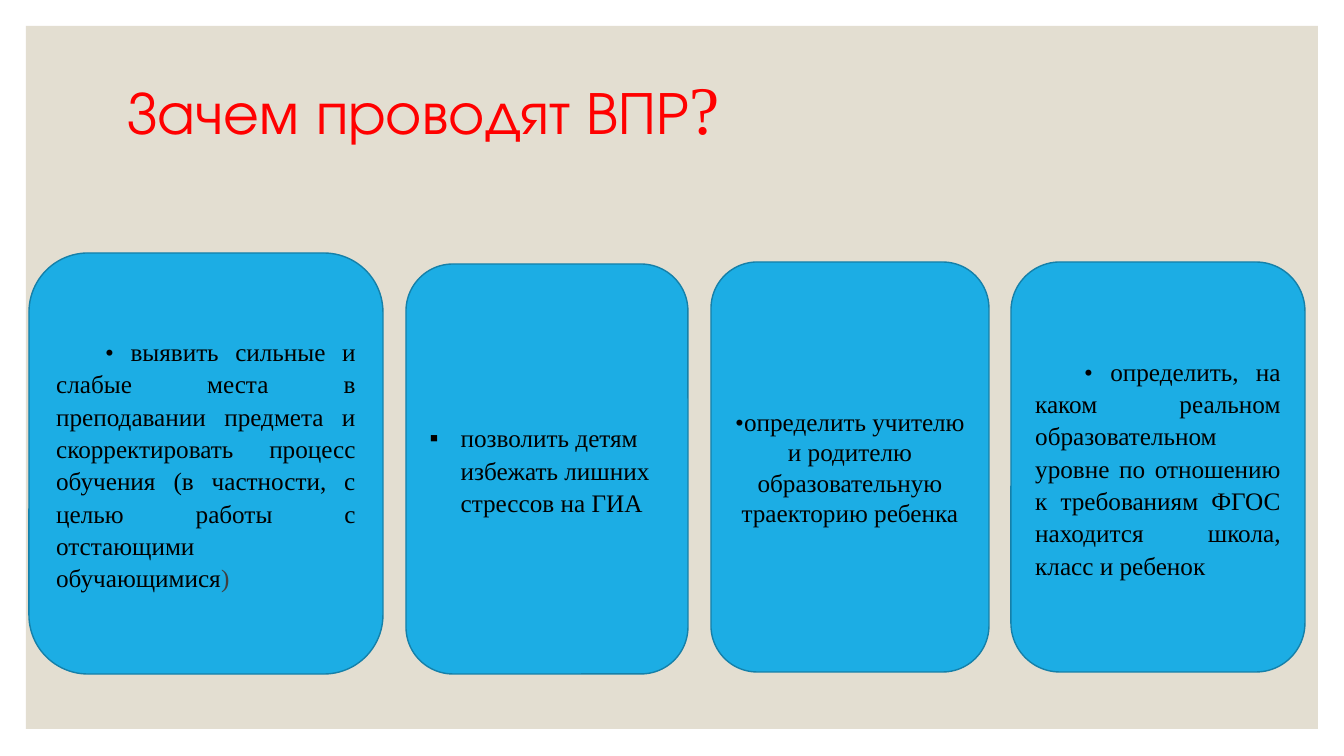
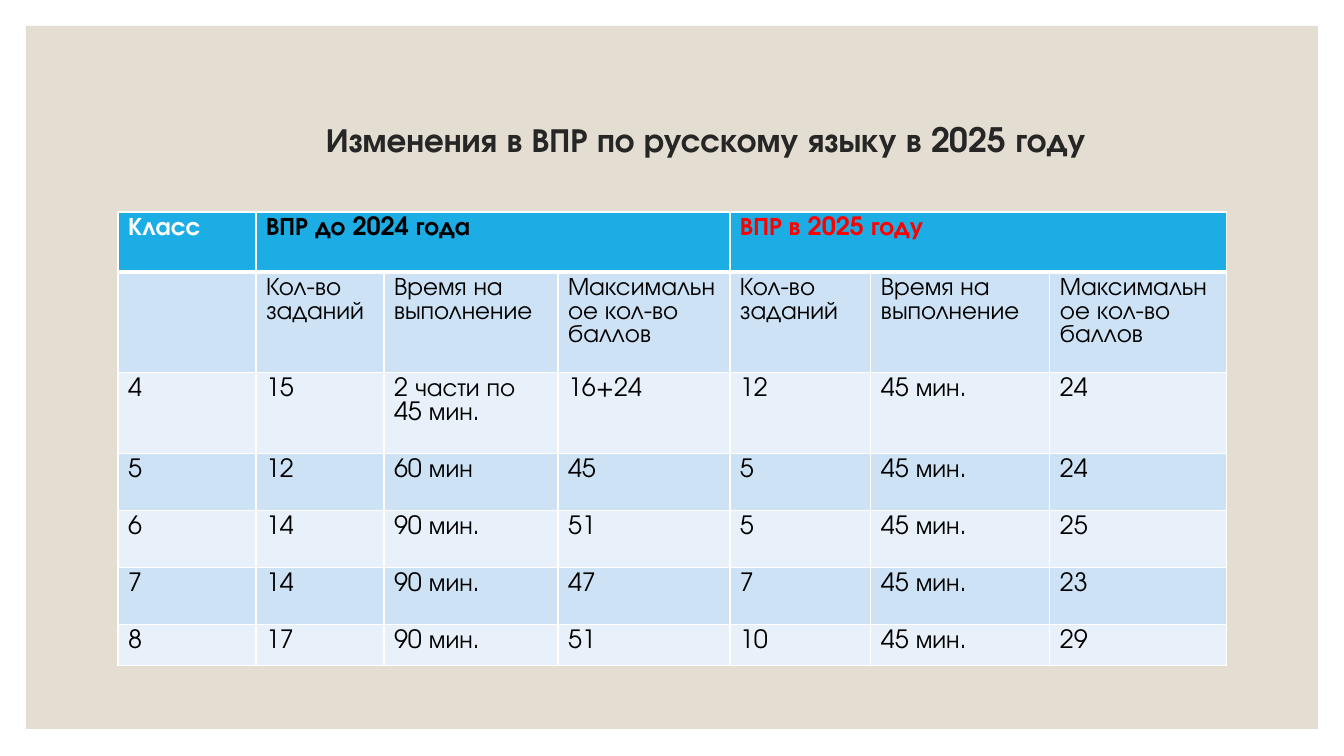
from pptx import Presentation
from pptx.dml.color import RGBColor
from pptx.enum.shapes import MSO_SHAPE
from pptx.enum.text import MSO_ANCHOR, PP_ALIGN
from pptx.util import Pt
from lxml.etree import SubElement
from pptx.oxml.ns import qn

PX = 914400 / 100.8
COLORS = {
    "white": "FFFFFF", "panel": "E3DED1", "blue": "1CADE4", "outline": "1580A9",
    "dark": "262626", "gray": "404040", "black": "000000", "red": "FF0000",
    "band_dark": "CDE3F5", "band_light": "E8F1FA",
}
SANS, SERIF = "TeX Gyre Adventor", "Times New Roman"

CARDS = [
    ((29, 253, 354, 421), "justify",
     [("• выявить сильные и слабые места в преподавании предмета и скорректировать "
       "процесс обучения (в частности, с целью работы с отстающими обучающимися", "black"),
      (")", "gray")]),
    ((406, 264, 282, 410), "bullet",
     [("позволить детям избежать лишних стрессов на ГИА", "black")]),
    ((711, 262, 278, 410), "center",
     [("•определить учителю и родителю образовательную траекторию ребенка", "black")]),
    ((1011, 262, 294, 410), "justify",
     [("• определить, на каком реальном образовательном уровне по отношению к "
       "требованиям ФГОС находится школа, класс и ребенок", "black")]),
]
CARD_STYLES = {
    "justify": dict(align=PP_ALIGN.JUSTIFY, margin=0, indent=49, spacing=1.07, after=8),
    "bullet": dict(align=PP_ALIGN.LEFT, margin=31, indent=-31, spacing=1.07, after=8),
    "center": dict(align=PP_ALIGN.CENTER, margin=0, indent=0, spacing=1, after=0),
}

COL_WIDTHS = [138, 128, 174, 172, 141, 179, 177]
ROW_HEIGHTS = [60, 81, 81, 57, 57, 57, 41]
HEADERS = [(0, 0, "Класс", "white"), (1, 3, "ВПР до 2024 года", "black"),
           (4, 6, "ВПР в 2025 году", "red")]
ROWS = [
    ["", "Кол-во\nзаданий", "Время на выполнение", "Максимальное кол-во баллов",
     "Кол-во\nзаданий", "Время на\nвыполнение", "Максимальное кол-во баллов"],
    ["4", "15", "2 части по\n45 мин.", "16+24", "12", "45 мин.", "24"],
    ["5", "12", "60 мин", "45", "5", "45 мин.", "24"],
    ["6", "14", "90 мин.", "51", "5", "45 мин.", "25"],
    ["7", "14", "90 мин.", "47", "7", "45 мин.", "23"],
    ["8", "17", "90 мин.", "51", "10", "45 мин.", "29"],
]


def px(n):
    return round(n * PX)


def rgb(name):
    return RGBColor.from_string(COLORS[name])


def add_run(p, text, size, font, color, bold=False):
    r = p.add_run()
    r.text = text
    r.font.size, r.font.name, r.font.bold = Pt(size), font, bold
    r.font.color.rgb = rgb(color)


def add_box(s, kind, box, fill, line=None):
    sp = s.shapes.add_shape(kind, *map(px, box))
    sp.shadow.inherit = False
    sp.fill.solid()
    sp.fill.fore_color.rgb = rgb(fill)
    if line:
        sp.line.color.rgb = rgb(line)
        sp.line.width = Pt(1)
    else:
        sp.line.fill.background()
    return sp


def add_slide(prs, title_box, title_runs):
    s = prs.slides.add_slide(prs.slide_layouts[6])
    add_box(s, MSO_SHAPE.RECTANGLE, (26, 26, 1292, 703), "panel")
    tf = s.shapes.add_textbox(*map(px, title_box)).text_frame
    tf.word_wrap = True
    tf.vertical_anchor = MSO_ANCHOR.MIDDLE
    p = tf.paragraphs[0]
    p.line_spacing = 0.9
    for run in title_runs:
        add_run(p, *run)
    return s


def add_card(s, box, style, runs):
    tf = add_box(s, MSO_SHAPE.ROUNDED_RECTANGLE, box, "blue", "outline").text_frame
    tf.word_wrap = True
    tf.vertical_anchor = MSO_ANCHOR.MIDDLE
    look = CARD_STYLES[style]
    p = tf.paragraphs[0]
    p.alignment, p.line_spacing = look["align"], look["spacing"]
    p.space_after = Pt(look["after"])
    pPr = p._p.get_or_add_pPr()
    pPr.set("marL", str(px(look["margin"])))
    pPr.set("indent", str(px(look["indent"])))
    if style == "bullet":
        SubElement(pPr, qn("a:buFont"), typeface=SERIF)
        SubElement(pPr, qn("a:buChar"), char="▪")
    for text, color in runs:
        add_run(p, text, 18, SERIF, color)


def style_cell(cell, fill, bottom):
    tcPr = cell._tc.get_or_add_tcPr()
    for side, width in (("L", 1), ("R", 1), ("T", 1), ("B", bottom)):
        ln = SubElement(tcPr, qn(f"a:ln{side}"), w=str(Pt(width)))
        solid = SubElement(ln, qn("a:solidFill"))
        SubElement(solid, qn("a:srgbClr"), val=COLORS["white"])
    cell.fill.solid()
    cell.fill.fore_color.rgb = rgb(fill)


def write_cell(cell, text, color, bold=False):
    tf = cell.text_frame
    for i, line in enumerate(text.split("\n")):
        p = tf.add_paragraph() if i else tf.paragraphs[0]
        if line:
            add_run(p, line, 18, SANS, color, bold)


def add_scores(s):
    table = s.shapes.add_table(len(ROW_HEIGHTS), len(COL_WIDTHS), px(118), px(212),
                               px(sum(COL_WIDTHS)), px(sum(ROW_HEIGHTS))).table
    for col, w in zip(table.columns, COL_WIDTHS):
        col.width = px(w)
    for i, (row, h) in enumerate(zip(table.rows, ROW_HEIGHTS)):
        row.height = px(h)
        fill = "blue" if i == 0 else "band_dark" if i % 2 else "band_light"
        for cell in row.cells:
            style_cell(cell, fill, 1 if i else 3)
    for first, last, text, color in HEADERS:
        if last > first:
            table.cell(0, first).merge(table.cell(0, last))
        write_cell(table.cell(0, first), text, color, True)
    for i, values in enumerate(ROWS, 1):
        for j, text in enumerate(values):
            write_cell(table.cell(i, j), text, "black")


def main():
    prs = Presentation()
    prs.slide_width, prs.slide_height = px(1344), px(756)

    s = add_slide(prs, (118, 71, 1109, 82),
                  [("Зачем проводят ВПР", 43.2, SANS, "red"), ("?", 48.6, SERIF, "red")])
    for card in CARDS:
        add_card(s, *card)

    s = add_slide(prs, (316, 71, 911, 141),
                  [("Изменения в ВПР по русскому языку в 2025 году", 24, SANS, "dark", True)])
    add_scores(s)

    prs.save("out.pptx")


if __name__ == "__main__":
    main()
